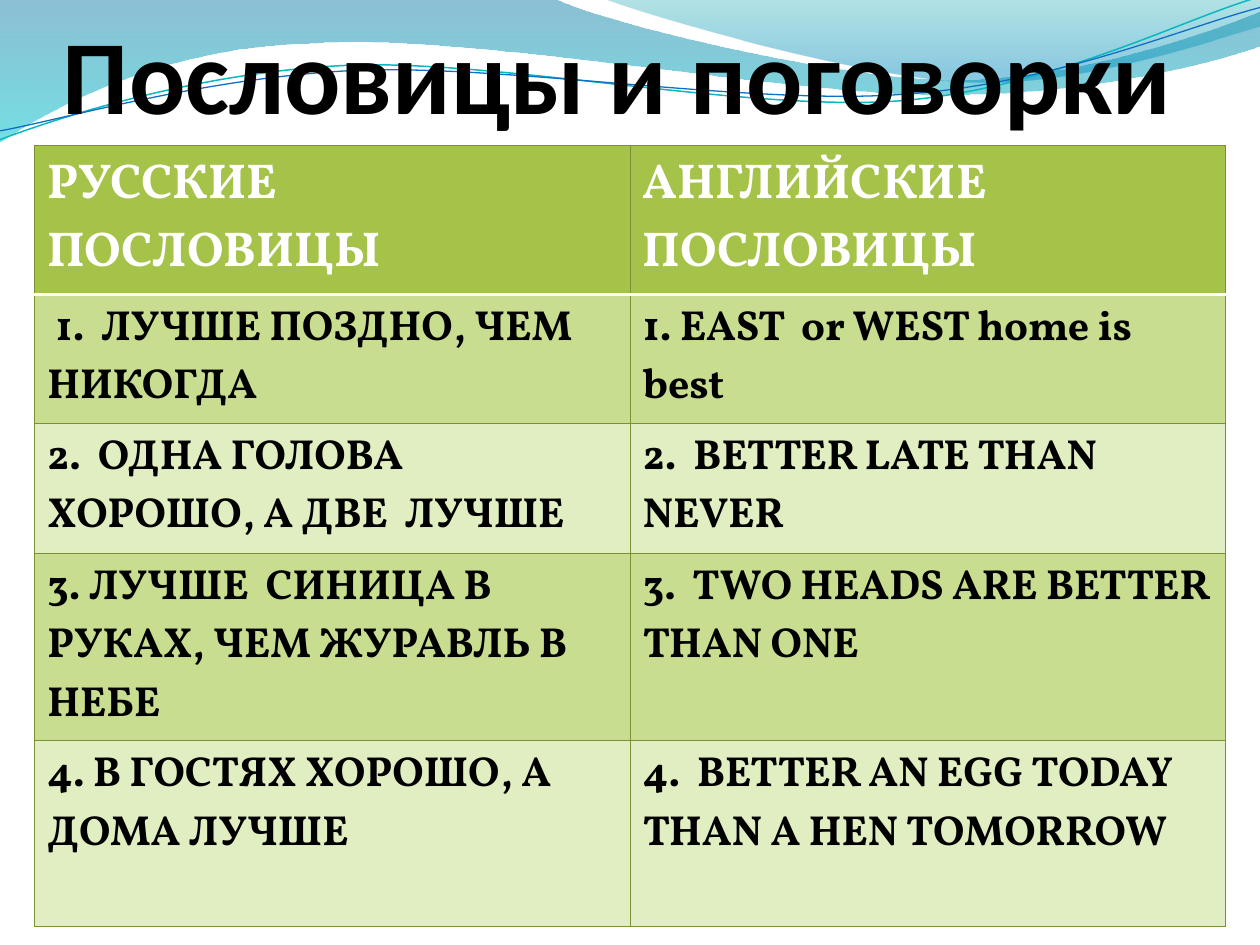
from lxml.etree import SubElement
from pptx import Presentation
from pptx.dml.color import RGBColor
from pptx.enum.text import MSO_ANCHOR as Anchor
from pptx.oxml.ns import qn
from pptx.util import Cm, Pt

TITLE_FONT, TABLE_FONT = "Calibri", "Vollkorn"
BLACK, WHITE = "000000", "FFFFFF"
GREEN, BAND, PALE, BORDER = "A5C249", "C9DD91", "E1EEC2", "7B9135"

UPPER_WAVE = [
    [(0, 0)],
    [(11.18, -0.03)],
    [(12.09, 0.43), (16.87, 1.6), (19.25, 1.6)],
    [(21.67, 1.6), (24.33, 0.66), (25.4, 0.23)],
    [(25.43, 0.91)],
    [(24.97, 1.12), (22.1, 1.93), (18.95, 1.91)],
    [(15.8, 1.91), (9.7, 0.71), (6.53, 0.86)],
    [(3.28, 0.91), (1.17, 2.11), (-0.03, 2.87)],
    [(0, 0)],
]
RIGHT_WAVE = [
    [(12.17, -0.03)],
    [(12.93, 0.28), (17.32, 1.57), (19.53, 1.65)],
    [(21.74, 1.75), (24.41, 0.81), (25.4, 0.53)],
    [(25.4, 0)],
    [(12.17, -0.03)],
]
TEAL_LINE = [
    [(-0.06, 2.22)],
    [(1.17, 1.82), (4.01, 1.04), (7.04, 1.05)],
    [(10.03, 1.07), (15.04, 2.37), (18.08, 2.29)],
    [(21.13, 2.2), (23.88, 0.91), (25.4, 0.55)],
]
BLUE_LINE = [
    [(-0.05, 2.04)],
    [(1.15, 1.89), (4.17, 1.15), (7.19, 1.16)],
    [(10.24, 1.18), (15.14, 2.25), (18.19, 2.16)],
    [(21.23, 2.1), (23.95, 1.06), (25.46, 0.75)],
]
PROVERBS = [
    ("РУССКИЕ ПОСЛОВИЦЫ", "АНГЛИЙСКИЕ ПОСЛОВИЦЫ"),
    (" 1.  ЛУЧШЕ ПОЗДНО, ЧЕМ НИКОГДА", "1. EAST  or WEST home is best"),
    ("2.  ОДНА ГОЛОВА ХОРОШО, А ДВЕ  ЛУЧШЕ", "2.  BETTER LATE THAN NEVER"),
    ("3. ЛУЧШЕ  СИНИЦА В РУКАХ, ЧЕМ ЖУРАВЛЬ В НЕБЕ",
     "3.  TWO HEADS ARE BETTER THAN ONE"),
    ("4. В ГОСТЯХ ХОРОШО, А ДОМА ЛУЧШЕ",
     "4.  BETTER AN EGG TODAY THAN A HEN TOMORROW"),
]
ROW_HEIGHTS = [3, 2.6, 2.62, 3.78, 3.74]


def rgb(value):
    return RGBColor.from_string(value)


class SlideBuilder:
    """Draws the proverb slide's elements in one shared style."""

    def __init__(self, slide):
        self.slide = slide

    def outline(self, segments, close):
        start, *rest = [(Cm(x), Cm(y)) for segment in segments for x, y in segment]
        builder = self.slide.shapes.build_freeform(*start)
        builder.add_line_segments(rest, close=close)
        sp = builder.convert_to_shape()
        sp.shadow.inherit = False
        lines = iter(list(sp._element.iter(qn("a:lnTo"))))
        for segment in segments[1:]:
            first, *others = [next(lines) for _ in segment]
            if others:
                first.tag = qn("a:cubicBezTo")
            for line in others:
                first.append(line[0])
                line.getparent().remove(line)
        return sp

    def wave(self, segments, stops):
        sp = self.outline(segments, True)
        sp.line.fill.background()
        sp.fill.gradient()
        sp.fill.gradient_angle = 270
        for stop, (position, color, _) in zip(sp.fill.gradient_stops, stops):
            stop.position = position
            stop.color.rgb = rgb(color)
        colors = list(sp._element.spPr.iter(qn("a:srgbClr")))
        for clr, (_, _, alpha) in zip(colors, stops):
            SubElement(clr, qn("a:alpha"), val=str(alpha * 1000))

    def curve(self, segments, color, width):
        sp = self.outline(segments, False)
        sp.rotation = 357.3
        sp.fill.background()
        sp.line.color.rgb = rgb(color)
        sp.line.width = Pt(width)

    def style(self, p, font, size, color):
        p.font.name, p.font.size, p.font.bold = font, Pt(size), True
        p.font.color.rgb = rgb(color)

    def title(self, text, left, top, width, height):
        sp = self.slide.shapes.add_textbox(Cm(left), Cm(top), Cm(width), Cm(height))
        tf = sp.text_frame
        tf.word_wrap = True
        tf.vertical_anchor = Anchor.BOTTOM
        tf.margin_left = tf.margin_right = tf.margin_bottom = 0
        tf.text = text
        self.style(tf.paragraphs[0], TITLE_FONT, 60, BLACK)

    def border(self, cell, side, color, width):
        ln = SubElement(cell._tc.get_or_add_tcPr(), qn("a:ln" + side), w=str(Pt(width)))
        SubElement(SubElement(ln, qn("a:solidFill")), qn("a:srgbClr"), val=color)

    def table(self, rows, heights, left, top, width):
        frame = self.slide.shapes.add_table(len(rows), len(rows[0]), Cm(left), Cm(top),
                                            Cm(width), Cm(sum(heights)))
        table = frame.table
        table.horz_banding = False
        for row, height in zip(table.rows, heights):
            row.height = Cm(height)
        for r, texts in enumerate(rows):
            fill = GREEN if r == 0 else BAND if r % 2 else PALE
            for c, text in enumerate(texts):
                cell = table.cell(r, c)
                for side in "LRTB":
                    under_header = (r, side) in ((0, "B"), (1, "T"))
                    self.border(cell, side, *((WHITE, 2) if under_header else (BORDER, 0.75)))
                cell.fill.solid()
                cell.fill.fore_color.rgb = rgb(fill)
                cell.text = text
                size, color = (28, WHITE) if r == 0 else (24, BLACK)
                self.style(cell.text_frame.paragraphs[0], TABLE_FONT, size, color)


def main():
    prs = Presentation()
    prs.slide_width, prs.slide_height = Cm(25.4), Cm(19.05)
    s = SlideBuilder(prs.slides.add_slide(prs.slide_layouts[6]))
    s.wave(UPPER_WAVE, [(0, "0074A1", 45), (1, "00C6CF", 55)])
    s.wave(RIGHT_WAVE, [(0, "00A1A9", 30), (0.8, "008BBF", 45)])
    s.curve(TEAL_LINE, "0AB8BF", 0.85)
    s.curve(BLUE_LINE, "0F6FC6", 0.75)
    s.title("Пословицы и поговорки", 1.27, 0, 22.86, 2.73)
    s.table(PROVERBS, ROW_HEIGHTS, 0.7, 2.93, 24.01)
    prs.save("out.pptx")


if __name__ == "__main__":
    main()
